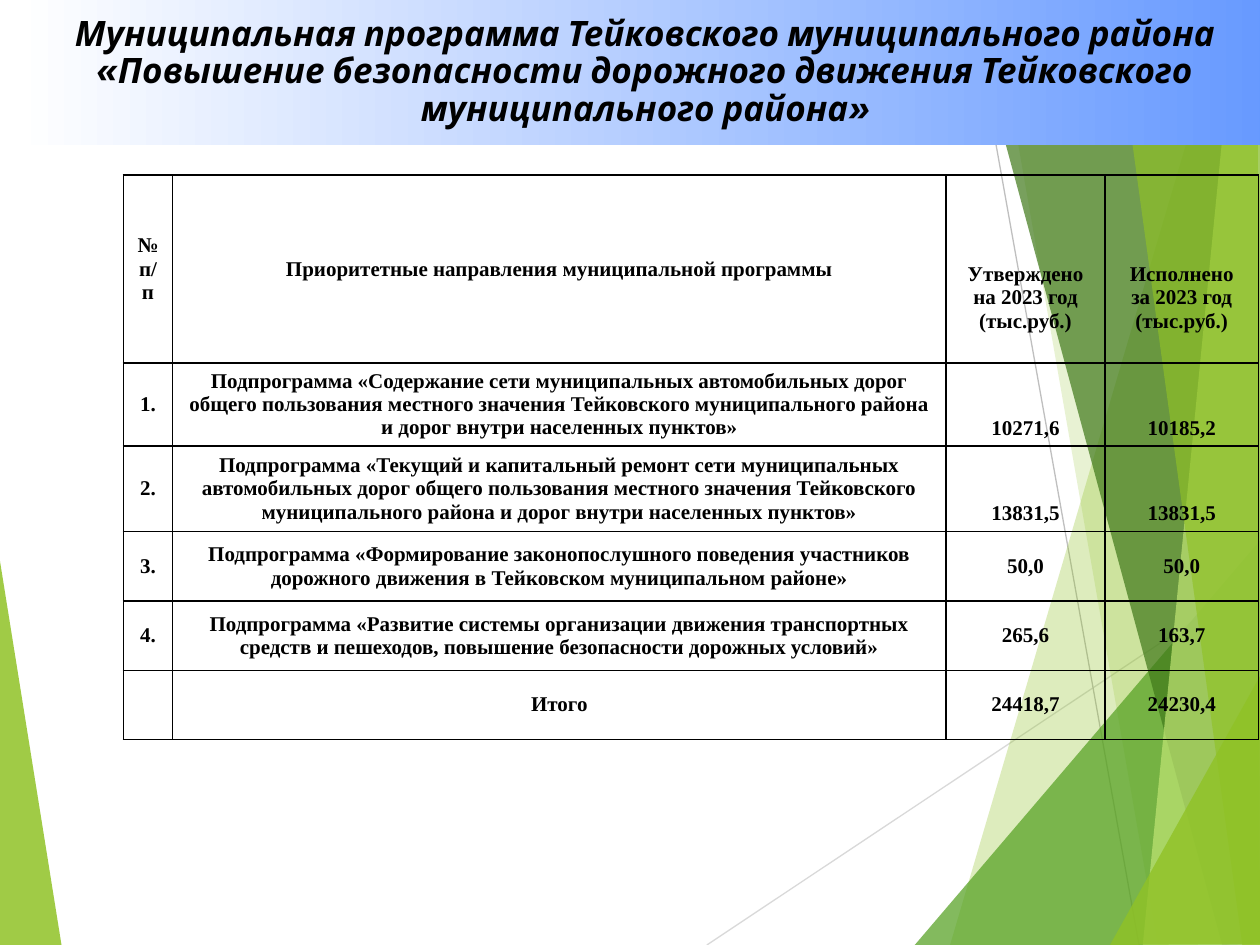
from pptx import Presentation
from pptx import util as u
from pptx.dml.color import RGBColor
from pptx.enum import shapes, text
from pptx.oxml import ns, xmlchemy
from lxml import etree

COLORS = {
    "lime": "90C226", "green": "54A021", "forest": "3F7819", "pale": "C0E474",
    "silver": "D9D9D9", "gray": "BFBFBF", "black": "000000",
    "white": "FFFFFF", "blue": "6699FF",
}
LEFT_FACET = ("lime", 85, [(-0.01, 4.39), (0.49, 7.51), (-0.01, 7.5)])
RAYS = [
    ("silver", (5.61, 7.5), (10.01, 4.57)),
    ("gray", (7.7, 0), (9.04, 7.5)),
]
RIGHT_FACETS = [
    ("lime", 30, [(9.75, 0), (7.54, 7.5), (10.02, 7.51), (10.01, 0.01)]),
    ("lime", 20, [(7.88, -0.01), (9.19, 7.5), (10.01, 7.5), (10.01, -0.01)]),
    ("green", 72, [(7.26, 7.5), (10, 4.29), (10.01, 7.5)]),
    ("forest", 70, [(7.67, -0.01), (9.7, 7.5), (10.01, 7.49), (10.01, -0.01)]),
    ("pale", 70, [(9.81, -0.01), (9.07, 7.5), (10.01, 7.5), (10, -0.01)]),
    ("lime", 65, [(8.83, -0.01), (9.86, 7.5), (10, 7.5), (9.98, -0.01)]),
    ("lime", 80, [(8.81, 7.5), (10.01, 5.35), (10.01, 7.49)]),
]
TITLE = [
    "Муниципальная программа Тейковского муниципального района",
    "«Повышение безопасности дорожного движения Тейковского муниципального района»",
]
ROWS = [
    ("№\nп/п", "Приоритетные направления муниципальной программы",
     "Утверждено\nна 2023 год\n(тыс.руб.)", "Исполнено\nза 2023 год\n(тыс.руб.)"),
    ("1.", "Подпрограмма «Содержание сети муниципальных автомобильных дорог общего пользования "
     "местного значения Тейковского муниципального района и дорог внутри населенных пунктов»",
     "10271,6", "10185,2"),
    ("2.", "Подпрограмма «Текущий и капитальный ремонт сети муниципальных автомобильных дорог общего "
     "пользования местного значения Тейковского муниципального района и дорог внутри населенных пунктов»",
     "13831,5", "13831,5"),
    ("3.", "Подпрограмма «Формирование законопослушного поведения участников дорожного движения "
     "в Тейковском муниципальном районе»", "50,0", "50,0"),
    ("4.", "Подпрограмма «Развитие системы организации движения транспортных средств и пешеходов, "
     "повышение безопасности дорожных условий»", "265,6", "163,7"),
    ("", "Итого", "24418,7", "24230,4"),
]
COLUMN_WIDTHS = [0.39, 6.14, 1.26, 1.22]
ROW_HEIGHTS = [1.49, 0.66, 0.68, 0.55, 0.55, 0.55]
TITLE_FONT = {"name": "Cabin", "size": u.Pt(20), "bold": True, "italic": True}
TABLE_FONT = {"name": "Times New Roman", "size": u.Pt(12), "bold": True}


def rgb(name):
    return RGBColor.from_string(COLORS[name])


def apply(target, values):
    for key, value in values.items():
        setattr(target, key, value)


def style_text(frame, font, spacing=None):
    for para in frame.paragraphs:
        apply(para, {"alignment": text.PP_ALIGN.CENTER, "line_spacing": spacing})
        for span in para.runs:
            apply(span.font, font)
            span.font.color.rgb = rgb("black")


def add_facet(page, color, opacity, points):
    start, *rest = [(u.Inches(x), u.Inches(y)) for x, y in points]
    builder = page.shapes.build_freeform(*start)
    builder.add_line_segments(rest, close=True)
    facet = builder.convert_to_shape()
    facet.shadow.inherit = False
    facet.line.fill.background()
    facet.fill.solid()
    facet.fill.fore_color.rgb = rgb(color)
    tint = next(facet._element.spPr.iter(ns.qn("a:srgbClr")))
    etree.SubElement(tint, ns.qn("a:alpha"), val=str(opacity * 1000))


def add_ray(page, color, start, end):
    ray = page.shapes.add_connector(
        shapes.MSO_CONNECTOR.STRAIGHT, *[u.Inches(v) for v in start + end])
    ray.line.color.rgb = rgb(color)
    ray.line.width = u.Pt(0.75)
    etree.SubElement(ray._element.spPr, ns.qn("a:effectLst"))


def add_borders(cell):
    properties = cell._tc.get_or_add_tcPr()
    for index, side in enumerate(("lnL", "lnR", "lnT", "lnB")):
        border = etree.Element(ns.qn("a:" + side), w=str(u.Pt(1)))
        fill = etree.SubElement(border, ns.qn("a:solidFill"))
        etree.SubElement(fill, ns.qn("a:srgbClr"), val=COLORS["black"])
        properties.insert(index, border)


def add_program_table(page):
    table = page.shapes.add_table(
        len(ROWS), len(COLUMN_WIDTHS), u.Inches(0.98), u.Inches(1.39),
        u.Inches(sum(COLUMN_WIDTHS)), u.Inches(sum(ROW_HEIGHTS))).table
    apply(table, {"first_row": False, "horz_banding": False})
    for column, width in zip(table.columns, COLUMN_WIDTHS):
        column.width = u.Inches(width)
    for r, (values, height) in enumerate(zip(ROWS, ROW_HEIGHTS)):
        table.rows[r].height = u.Inches(height)
        for c, value in enumerate(values):
            cell = table.cell(r, c)
            cell.text = value
            low = c > 1 and r < 3
            side, edge = (0.08, 0) if c and r > 2 else (0.1, 0.05)
            apply(cell, {
                "vertical_anchor": text.MSO_ANCHOR.BOTTOM if low else text.MSO_ANCHOR.MIDDLE,
                "margin_left": u.Inches(side), "margin_right": u.Inches(side),
                "margin_top": u.Inches(edge),
                "margin_bottom": u.Inches(0.24 if low and r == 0 else edge),
            })
            cell.fill.background()
            add_borders(cell)
            style_text(cell.text_frame, TABLE_FONT)


def add_title(page):
    banner = page.shapes.add_shape(
        shapes.MSO_SHAPE.RECTANGLE, u.Inches(0.12), 0, u.Inches(10), u.Inches(1.15))
    banner.shadow.inherit = False
    banner.line.fill.background()
    banner.fill.gradient()
    banner.fill.gradient_angle = 0
    for stop, position, color in zip(banner.fill.gradient_stops, (0, 1), ("white", "blue")):
        stop.position = position
        stop.color.rgb = rgb(color)
    frame = banner.text_frame
    frame.text = "\n".join(TITLE)
    apply(frame, {"word_wrap": True, "vertical_anchor": text.MSO_ANCHOR.MIDDLE})
    style_text(frame, TITLE_FONT, 0.9)


def main():
    deck = Presentation()
    apply(deck, {"slide_width": u.Inches(10), "slide_height": u.Inches(7.5)})
    page = deck.slides.add_slide(deck.slide_layouts[6])
    add_facet(page, *LEFT_FACET)
    for ray in RAYS:
        add_ray(page, *ray)
    for facet in RIGHT_FACETS:
        add_facet(page, *facet)
    add_program_table(page)
    add_title(page)
    deck.save("out.pptx")


if __name__ == "__main__":
    main()
